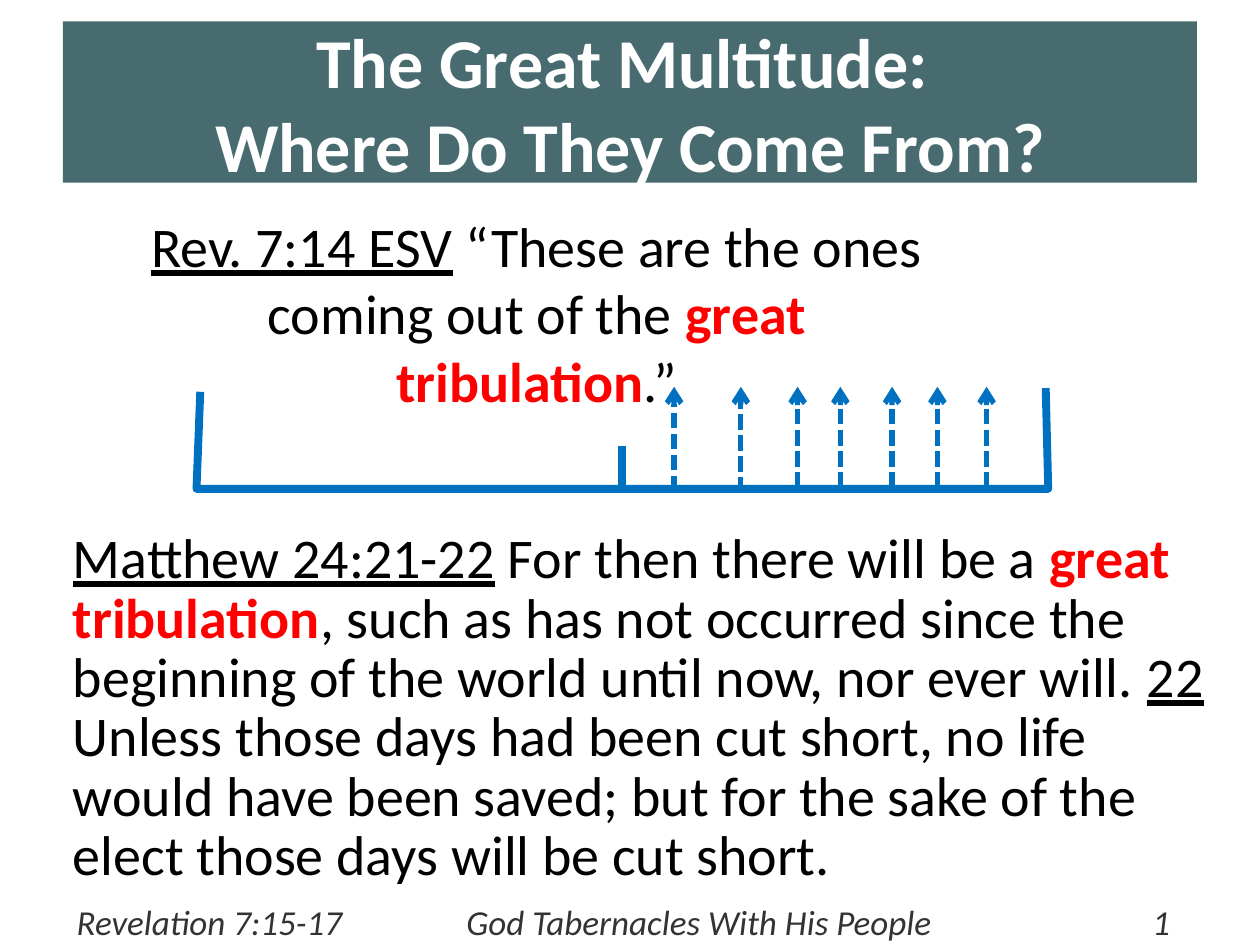
from dataclasses import dataclass

from lxml import etree
from pptx import Presentation
from pptx import util as u
from pptx.dml.color import RGBColor
from pptx.enum import dml, shapes, text
from pptx.oxml import ns
from pptx.util import Inches


@dataclass(frozen=True)
class Theme:
    font: str = "Calibri"
    banner: RGBColor = RGBColor(0x48, 0x6B, 0x70)
    light: RGBColor = RGBColor(0xFF, 0xFF, 0xFF)
    ink: RGBColor = RGBColor(0, 0, 0)
    stress: RGBColor = RGBColor(0xFF, 0, 0)
    timeline: RGBColor = RGBColor(0, 0x70, 0xC0)
    footer: RGBColor = RGBColor(0x33, 0x33, 0x33)
    title_size: u.Pt = u.Pt(40)
    verse_size: u.Pt = u.Pt(32)
    footer_size: u.Pt = u.Pt(20)
    bracket_width: u.Pt = u.Pt(4.5)
    arrow_width: u.Pt = u.Pt(3)


THEME = Theme()
PLAIN, REFERENCE, STRESS = "plain", "reference", "stress"


def sub(parent, tag, **attributes):
    return etree.SubElement(parent, ns.qn(tag), attributes)


def set_font(paragraph, size, color):
    paragraph.font.name = THEME.font
    paragraph.font.size = size
    paragraph.font.color.rgb = color


def add_text(slide, left, top, width, height):
    box = slide.shapes.add_textbox(*map(Inches, (left, top, width, height)))
    box.text_frame.word_wrap = True
    return box.text_frame


def add_title(slide, left, top, width, height):
    banner = slide.shapes.add_shape(
        shapes.MSO_SHAPE.RECTANGLE, *map(Inches, (left, top, width, height)))
    banner.shadow.inherit = False
    banner.fill.solid()
    banner.fill.fore_color.rgb = THEME.banner
    banner.line.fill.background()
    frame = banner.text_frame
    frame.word_wrap = True
    frame.vertical_anchor = text.MSO_ANCHOR.MIDDLE
    title = frame.paragraphs[0]
    title.text = "The Great Multitude: \vWhere Do They Come From?"
    title.alignment = text.PP_ALIGN.CENTER
    set_font(title, THEME.title_size, THEME.light)
    title.font.bold = True


def add_verse(slide, left, top, width, height, parts):
    """Place a passage given as (wording, role) parts; return its paragraph."""
    verse = add_text(slide, left, top, width, height).paragraphs[0]
    set_font(verse, THEME.verse_size, THEME.ink)
    for wording, role in parts:
        run = verse.add_run()
        run.text = wording
        if role == REFERENCE:
            run.font.underline = True
        elif role == STRESS:
            run.font.bold = True
            run.font.color.rgb = THEME.stress
    return verse


def add_stroke(slide, x, start, end, width):
    """Draw a vertical line from start to end."""
    stroke = slide.shapes.add_connector(
        shapes.MSO_CONNECTOR.STRAIGHT, *map(Inches, (x, start, x, end)))
    stroke.line.color.rgb = THEME.timeline
    stroke.line.width = width
    sub(stroke.element.spPr, "a:effectLst")
    return stroke


def add_timeline(slide, left, top, width, height):
    base = top + height

    # Bracket with slightly flared ends
    outline = [(0.03, 0.03), (0, height), (width, height), (width - 0.02, 0)]
    points = [(Inches(left + x), Inches(top + y)) for x, y in outline]
    builder = slide.shapes.build_freeform(*points[0])
    builder.add_line_segments(points[1:], close=False)
    bracket = builder.convert_to_shape()
    bracket.shadow.inherit = False
    bracket.fill.background()
    bracket.line.color.rgb = THEME.timeline
    bracket.line.width = THEME.bracket_width

    # Midpoint mark
    add_stroke(slide, left + width / 2, base - 0.34, base, THEME.bracket_width)

    # Rising dashed arrows: (offset from the left end, drop below the base)
    for offset, drop in [(3.79, 0.03), (4.32, 0.04), (4.77, 0), (5.11, 0),
                         (5.52, 0), (5.88, 0), (6.27, 0)]:
        arrow = add_stroke(slide, left + offset, base - 0.01 + drop,
                           top - 0.01, THEME.arrow_width)
        arrow.line.dash_style = dml.MSO_LINE.SQUARE_DOT
        sub(arrow.line._get_or_add_ln(), "a:tailEnd", type="arrow")


def add_footer(slide, left, top, width, height):
    frame = add_text(slide, left, top, width, height)
    frame.vertical_anchor = text.MSO_ANCHOR.MIDDLE
    footer = frame.paragraphs[0]
    footer.text = "Revelation 7:15-17 \tGod Tabernacles With His People\t 1"
    tabs = sub(footer._p.get_or_add_pPr(), "a:tabLst")
    for position, alignment in [(4.94, "ctr"), (8.68, "r")]:
        sub(tabs, "a:tab", pos=str(Inches(position)), algn=alignment)
    set_font(footer, THEME.footer_size, THEME.footer)
    footer.font.italic = True


def main():
    deck = Presentation()
    deck.slide_width, deck.slide_height = Inches(10), Inches(7.5)
    slide = deck.slides.add_slide(deck.slide_layouts[6])

    add_footer(slide, 0.51, 7.13, 9, 0.37)
    add_title(slide, 0.5, 0.17, 9, 1.28)

    # Passages
    revelation = add_verse(slide, 1.08, 1.63, 6.36, 1.72, [
        ("Rev. 7:14 ESV", REFERENCE),
        (" “These are the ones coming out of the ", PLAIN),
        ("great tribulation", STRESS),
        (".”", PLAIN),
    ])
    revelation.alignment = text.PP_ALIGN.CENTER
    matthew = add_verse(slide, 0.48, 4.16, 9.19, 2.96, [
        ("Matthew 24:21-22", REFERENCE),
        (" For then there will be a ", PLAIN),
        ("great tribulation", STRESS),
        (", such as has not occurred since the beginning of the world "
         "until now, nor ever will. ", PLAIN),
        ("22", REFERENCE),
        (" Unless those days had been cut short, no life would have been "
         "saved; but for the sake of the elect those days will be cut short.",
         PLAIN),
    ])
    matthew.line_spacing = u.Pt(34)

    add_timeline(slide, 1.56, 3.08, 6.76, 0.8)
    deck.save("out.pptx")


if __name__ == "__main__":
    main()
